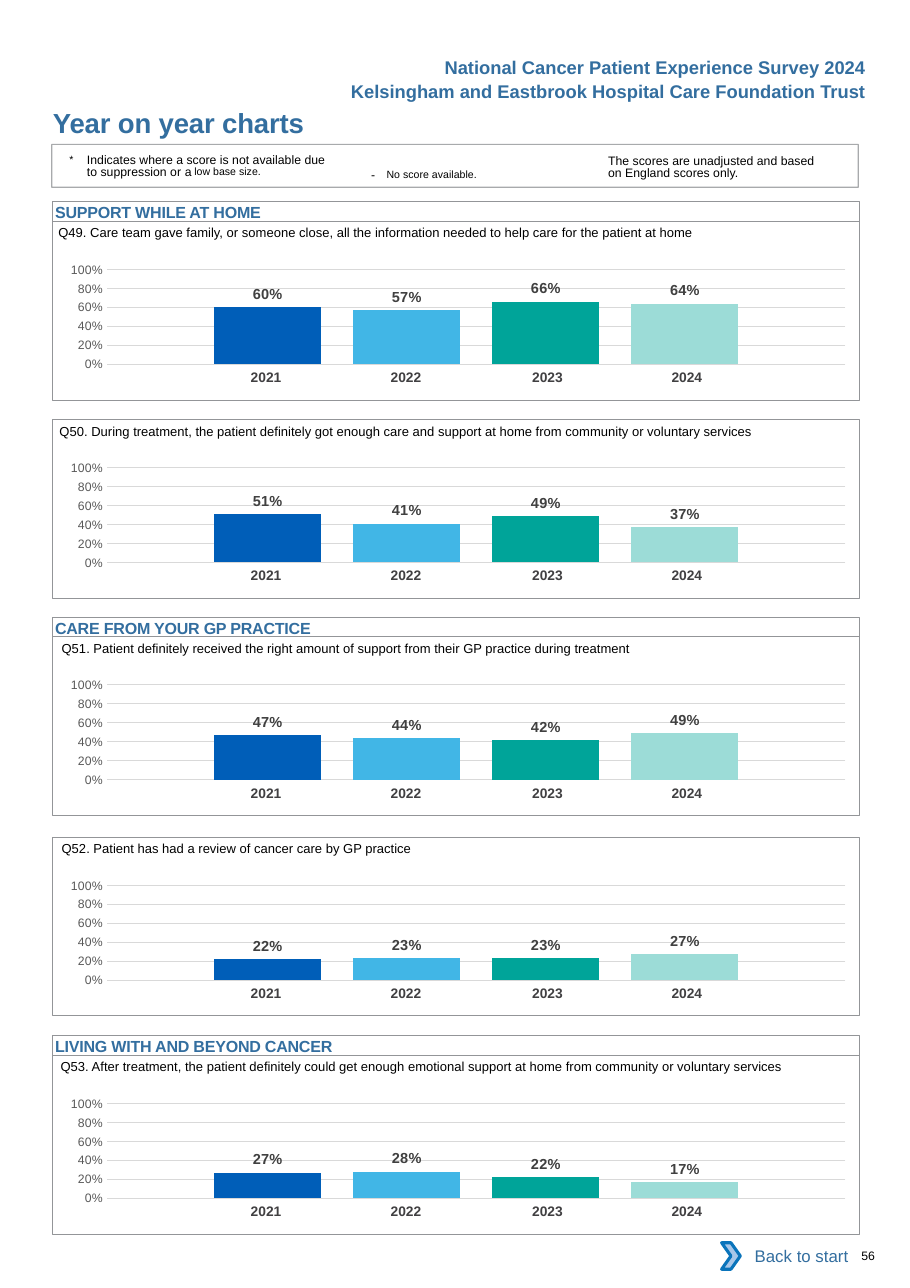
from lxml import etree
from pptx import Presentation
from pptx import util as u
from pptx.chart import data as chart_data
from pptx.dml.color import RGBColor
from pptx.enum import chart as charts, shapes, text
from pptx.oxml import ns

PX = 9144  # one hundredth of an inch
BLUE = RGBColor(0x33, 0x6E, 0x9F)
BLACK = RGBColor(0, 0, 0)
WHITE = RGBColor(0xFF, 0xFF, 0xFF)
FRAME_GREY = RGBColor(0x93, 0x95, 0x98)
GRID_GREY = RGBColor(0xD9, 0xD9, 0xD9)
AXIS_GREY = RGBColor(0x59, 0x59, 0x59)
LABEL_GREY = RGBColor(0x40, 0x40, 0x40)
YEAR_GREY = RGBColor(0x41, 0x40, 0x42)
CHEVRON_FILL = RGBColor(0xA8, 0xC7, 0xE9)
CHEVRON_LINE = RGBColor(0x0A, 0x74, 0xBB)
YEAR_COLOURS = {
    "2021": RGBColor(0x00, 0x5E, 0xB8),
    "2022": RGBColor(0x41, 0xB6, 0xE6),
    "2023": RGBColor(0x00, 0xA4, 0x99),
    "2024": RGBColor(0x9C, 0xDC, 0xD7),
}
YEAR_COLUMNS = [(127, 0), (127, 0), (134, 4), (127, 12)]  # width, right margin
PLAIN_TABLE = "{2D5ABB26-0587-4C30-8999-92F81FD0307C}"
LEFT, WIDTH, PANEL_HEIGHT, HEADING_HEIGHT = 48, 732, 162, 18
PANELS = [  # top, heading, question, question indent, scores
    (201, "SUPPORT WHILE AT HOME",
     "Q49. Care team gave family, or someone close, all the information needed "
     "to help care for the patient at home", 5, (0.60, 0.57, 0.66, 0.64)),
    (381, None,
     "Q50. During treatment, the patient definitely got enough care and support "
     "at home from community or voluntary services", 6, (0.51, 0.41, 0.49, 0.37)),
    (578, "CARE FROM YOUR GP PRACTICE",
     "Q51. Patient definitely received the right amount of support from their "
     "GP practice during treatment", 8, (0.47, 0.44, 0.42, 0.49)),
    (760, None, "Q52. Patient has had a review of cancer care by GP practice",
     8, (0.22, 0.23, 0.23, 0.27)),
    (958, "LIVING WITH AND BEYOND CANCER",
     "Q53. After treatment, the patient definitely could get enough emotional "
     "support at home from community or voluntary services", 7,
     (0.27, 0.28, 0.22, 0.17)),
]


def box(*lengths):
    return [length * PX for length in lengths]


def style(font, size, colour, bold=False):
    font.name, font.size, font.bold = "Arial", u.Pt(size), bold
    font.color.rgb = colour


def set_margins(frame, left=0, top=0, right=0, bottom=0):
    frame.margin_left, frame.margin_top, frame.margin_right, frame.margin_bottom = box(
        left, top, right, bottom)


def write(shape, words, size, colour, bold=False, align=text.PP_ALIGN.LEFT, margins=(0,)):
    frame = shape.text_frame
    frame.text = words
    frame.word_wrap = True
    frame.auto_size = text.MSO_AUTO_SIZE.NONE
    frame.vertical_anchor = text.MSO_ANCHOR.TOP
    set_margins(frame, *margins)
    paragraph = frame.paragraphs[0]
    paragraph.alignment = align
    style(paragraph.runs[0].font, size, colour, bold)
    return frame


def add_outline(slide, left, top, width, height, weight=0.5):
    shape = slide.shapes.add_shape(shapes.MSO_SHAPE.RECTANGLE, *box(left, top, width, height))
    shape.shadow.inherit = False
    shape.fill.background()
    shape.line.color.rgb = FRAME_GREY
    shape.line.width = u.Pt(weight)
    return shape


def add_header(slide):
    lines = ["National Cancer Patient Experience Survey 2024",
             "Kelsingham and Eastbrook Hospital Care Foundation Trust"]
    for row, line in enumerate(lines):
        shape = slide.shapes.add_textbox(*box(306, 46 + 22 * row, 490, 30))
        write(shape, line, 12, BLUE, True, text.PP_ALIGN.RIGHT, (0, 5, 10, 5))
    title = slide.shapes.title
    title.left, title.top, title.width, title.height = box(47, 96, 450, 30)
    write(title, "Year on year charts", 18, BLUE, True, margins=(1,))
    title.text_frame.paragraphs[0].runs[0].font._element.set("spc", "-10")


def add_note(slide, left, top, width, height, margins, runs, leading=None):
    """Add a note; each run is (words, size, baseline shift, letter spacing)."""
    shape = slide.shapes.add_textbox(*box(left, top, width, height))
    frame = shape.text_frame
    frame.word_wrap = True
    set_margins(frame, *margins)
    paragraph = frame.paragraphs[0]
    if leading:
        paragraph.line_spacing = u.Pt(leading)
    for words, size, baseline, spacing in runs:
        run = paragraph.add_run()
        run.text = words
        style(run.font, size, BLACK)
        properties = run.font._element
        properties.set("baseline", str(baseline * 1000))
        properties.set("spc", str(spacing))
    return paragraph


def add_legend(slide, left, top, width, height):
    outline = add_outline(slide, left, top, width, height, 0.75)
    colour = outline.line._ln.find(".//" + ns.qn("a:srgbClr"))
    etree.SubElement(colour, ns.qn("a:alpha")).set("val", "80000")
    hanging = add_note(slide, left + 16, top + 7, 240, 27, (0, 3), [
        ("*\t", 12, 3, 0),
        ("Indicates where a score is not available due to suppression or ", 8, 0, 0),
        ("a ", 8, 0, -50), ("low base size.", 12, 7, 0)], 8.1)
    properties = hanging._p.get_or_add_pPr()
    properties.set("marL", str(16 * PX))
    properties.set("indent", str(-16 * PX))
    add_note(slide, left + 280, top + 10, 183, 24, (10, 5, 10, 5),
             [("- ", 8, 0, 260), ("No score available.", 12, 3, 0)])
    add_note(slide, left + 505, top + 7, 195, 27, (0, 3),
             [("The scores are unadjusted and based on England scores only.", 8, 0, 0)], 8.1)


def fix_plot_area(chart, x, y, w, h):
    plot_area = chart._chartSpace.chart.plotArea
    layout = plot_area.find(ns.qn("c:layout"))
    if layout is None:
        layout = etree.Element(ns.qn("c:layout"))
        plot_area.insert(0, layout)
    manual = etree.SubElement(layout, ns.qn("c:manualLayout"))
    values = dict(layoutTarget="inner", xMode="edge", yMode="edge", x=x, y=y, w=w, h=h)
    for name, value in values.items():
        etree.SubElement(manual, ns.qn("c:" + name)).set("val", str(value))


def add_score_chart(slide, left, top, width, height, scores):
    data = chart_data.CategoryChartData(number_format="0%")
    data.categories = ["1"]
    for number, score in enumerate(scores, 1):
        data.add_series(f"Series {number}", [score])
    chart = slide.shapes.add_chart(charts.XL_CHART_TYPE.COLUMN_CLUSTERED,
                                   *box(left, top, width, height), data).chart
    chart.has_legend = chart.has_title = False
    chart.font.name, chart.font.size = "Calibri", u.Pt(10)
    chart.font.color.rgb = BLACK
    chart.category_axis.visible = False
    axis = chart.value_axis
    axis.minimum_scale, axis.maximum_scale, axis.major_unit = 0, 1, 0.2
    axis.major_tick_mark = axis.minor_tick_mark = charts.XL_TICK_MARK.NONE
    axis.format.line.fill.background()
    axis.major_gridlines.format.line.color.rgb = GRID_GREY
    axis.major_gridlines.format.line.width = u.Pt(0.75)
    axis.tick_labels.number_format = "0%"
    axis.tick_labels.number_format_is_linked = False
    style(axis.tick_labels.font, 8, AXIS_GREY)
    plot = chart.plots[0]
    plot.vary_by_categories = False
    plot.gap_width, plot.overlap = 200, -30
    for series, colour in zip(plot.series, YEAR_COLOURS.values()):
        series.format.fill.solid()
        series.format.fill.fore_color.rgb = colour
        labels = series.data_labels
        labels.show_value = True
        labels.position = charts.XL_LABEL_POSITION.OUTSIDE_END
        labels.number_format, labels.number_format_is_linked = "0%", False
        style(labels.font, 9.5, LABEL_GREY, True)
    fix_plot_area(chart, 0.08, 0.145, 0.915, 0.666)


def add_year_row(slide, left, top):
    width = sum(column for column, _ in YEAR_COLUMNS)
    table = slide.shapes.add_table(1, len(YEAR_COLUMNS), *box(left, top, width, 27)).table
    table.first_row = table.horz_banding = False
    table._tbl.tblPr.find(ns.qn("a:tableStyleId")).text = PLAIN_TABLE
    for index, (year, (column, right)) in enumerate(zip(YEAR_COLOURS, YEAR_COLUMNS)):
        table.columns[index].width = column * PX
        cell = table.cell(0, index)
        cell.fill.background()
        set_margins(cell, 10, 5, right, 5)
        cell.text_frame.text = year
        paragraph = cell.text_frame.paragraphs[0]
        paragraph.alignment = text.PP_ALIGN.CENTER
        style(paragraph.runs[0].font, 9, YEAR_GREY, True)


def add_panel(slide, left, top, width, height, heading, question, indent, scores):
    if heading:
        bar = add_outline(slide, left, top - HEADING_HEIGHT, width, HEADING_HEIGHT)
        frame = write(bar, heading, 10.5, BLUE, True, margins=(2, 1))
        frame.paragraphs[0].runs[0].font._element.set("spc", "-10")
    add_outline(slide, left, top, width, height)
    caption = slide.shapes.add_textbox(*box(left + indent, top - 6, width - indent, 24))
    write(caption, question, 8.5, BLACK, margins=(0, 9))
    add_year_row(slide, left + 125, top + 130)
    add_score_chart(slide, left - 9, top + 25, width, 129, scores)


def add_footer(slide, left, top):
    button = slide.shapes.add_shape(shapes.MSO_SHAPE.RECTANGLE, *box(left + 7, top, 118, 42))
    chevron = slide.shapes.add_shape(shapes.MSO_SHAPE.CHEVRON, *box(left, top + 9, 17, 24))
    for shape, colour in ((button, WHITE), (chevron, CHEVRON_FILL)):
        shape.shadow.inherit = False
        shape.fill.solid()
        shape.fill.fore_color.rgb = colour
    button.line.fill.background()
    chevron.line.color.rgb = CHEVRON_LINE
    chevron.line.width = u.Pt(2)
    frame = write(button, "Back to start", 11, BLUE, False, text.PP_ALIGN.RIGHT, (10, 5, 10, 5))
    frame.vertical_anchor = text.MSO_ANCHOR.MIDDLE
    page = slide.shapes.add_textbox(*box(left + 117, top + 14, 51, 13))
    write(page, "56", 8, BLACK, margins=(10,))


def main():
    presentation = Presentation()
    presentation.slide_width, presentation.slide_height = box(826, 1169)
    slide = presentation.slides.add_slide(presentation.slide_layouts[5])
    add_header(slide)
    add_legend(slide, 47, 131, WIDTH, 39)
    add_footer(slide, 655, 1119)
    for top, *content in PANELS:
        add_panel(slide, LEFT, top, WIDTH, PANEL_HEIGHT, *content)
    presentation.save("out.pptx")


if __name__ == "__main__":
    main()
